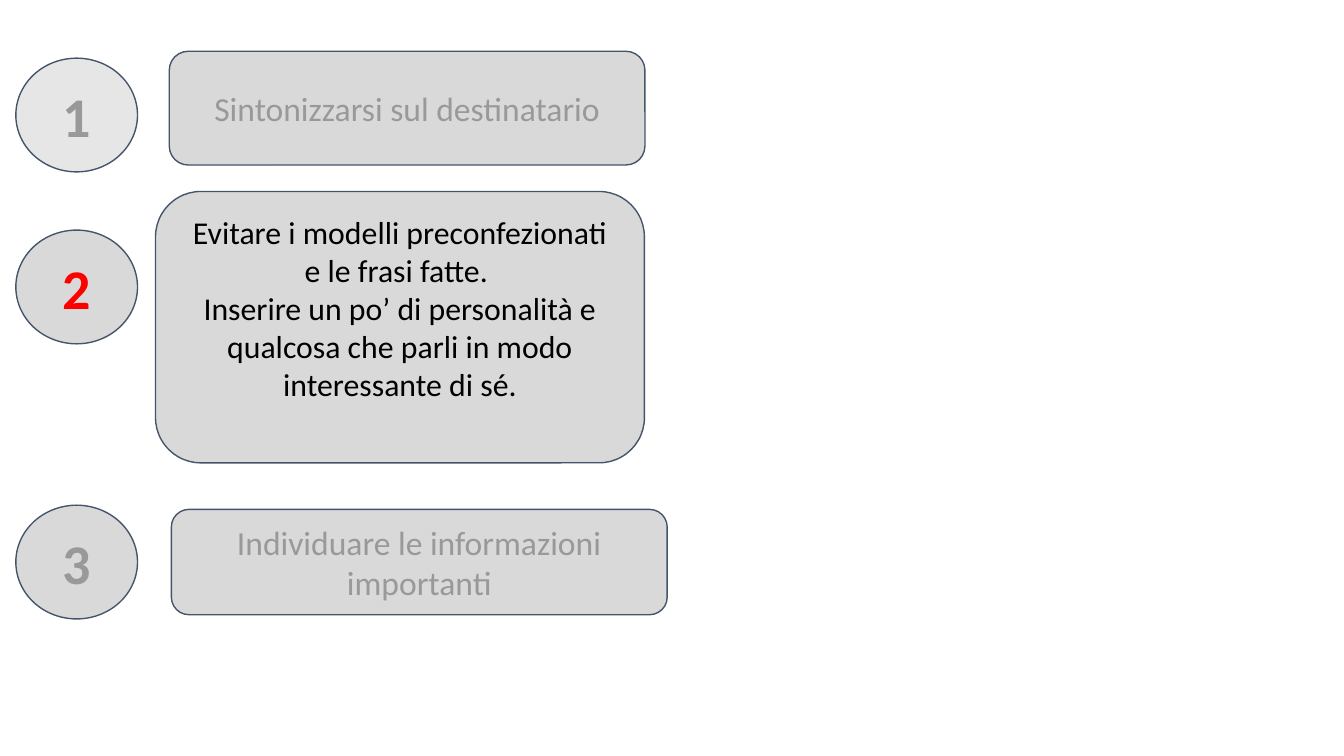
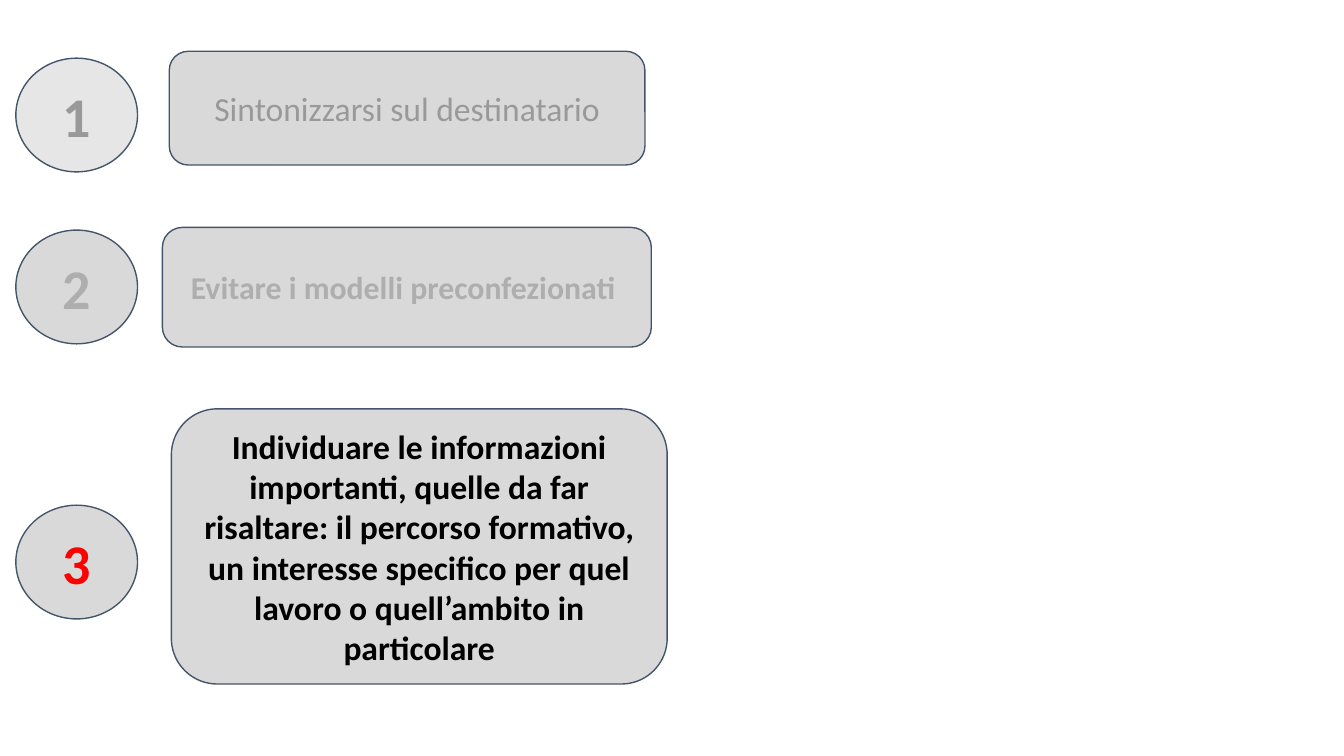
import pptx
import pptx.util
import pptx.dml.color
import pptx.enum.shapes
import pptx.enum.text

Cm = pptx.util.Cm
SHAPES = pptx.enum.shapes.MSO_SHAPE

FONT = "Calibri"
PANEL = "D9D9D9"
PALE = "E7E6E6"
OUTLINE = "44546A"
MUTED = "999999"
FAINT = "AEAEAE"
ACTIVE = "FF0000"
BLACK = "000000"
INSET = 0.25
BADGE_LEFT, BADGE_WIDTH, BADGE_HEIGHT = 0.3, 2.3, 2.15
BADGE_TOPS = {1: 1.1, 2: 4.35, 3: 9.55}


def rgb(value):
    return pptx.dml.color.RGBColor.from_string(value)


def add_panel(slide, kind, box, text, size, color, bold=False, fill=PANEL, bottom=INSET):
    shape = slide.shapes.add_shape(kind, *(Cm(length) for length in box))
    shape.shadow.inherit = False
    shape.fill.solid()
    shape.fill.fore_color.rgb = rgb(fill)
    shape.line.color.rgb = rgb(OUTLINE)
    shape.line.width = pptx.util.Pt(0.75)
    frame = shape.text_frame
    frame.word_wrap = True
    frame.vertical_anchor = pptx.enum.text.MSO_ANCHOR.MIDDLE
    frame.margin_left = frame.margin_right = frame.margin_top = Cm(INSET)
    frame.margin_bottom = Cm(bottom)
    frame.text = text
    for paragraph in frame.paragraphs:
        paragraph.alignment = pptx.enum.text.PP_ALIGN.CENTER
        for run in paragraph.runs:
            run.font.name = FONT
            run.font.size = pptx.util.Pt(size)
            run.font.bold = bold
            run.font.color.rgb = rgb(color)


def add_step(slide, number, number_color, box, text, size, color, bold=False, bottom=INSET):
    add_panel(slide, SHAPES.ROUNDED_RECTANGLE, box, text, size, color, bold, bottom=bottom)
    badge = (BADGE_LEFT, BADGE_TOPS[number], BADGE_WIDTH, BADGE_HEIGHT)
    add_panel(slide, SHAPES.OVAL, badge, str(number), 30, number_color, True,
              fill=PALE if number == 1 else PANEL)


def add_steps_slide(presentation, steps):
    slide = presentation.slides.add_slide(presentation.slide_layouts[6])
    for step in steps:
        add_step(slide, **step)


def main():
    presentation = pptx.Presentation()
    presentation.slide_width = Cm(25.4)
    presentation.slide_height = Cm(14.29)

    audience = dict(number=1, number_color=MUTED, box=(3.2, 0.97, 8.99, 2.15),
                    text="Sintonizzarsi sul destinatario", size=18, color=MUTED)
    add_steps_slide(presentation, [
        audience,
        dict(number=2, number_color=ACTIVE, box=(2.94, 3.62, 9.24, 5.13),
             text="Evitare i modelli preconfezionati e le frasi fatte. \n"
                  "Inserire un po’ di personalità e qualcosa che parli in modo "
                  "interessante di sé.",
             size=17, color=BLACK, bottom=0.97),
        dict(number=3, number_color=MUTED, box=(3.24, 9.63, 9.37, 1.99),
             text="Individuare le informazioni importanti", size=18, color=MUTED),
    ])
    add_steps_slide(presentation, [
        audience,
        dict(number=2, number_color=FAINT, box=(3.07, 4.3, 9.24, 2.26),
             text="Evitare i modelli preconfezionati ", size=17, color=FAINT, bold=True),
        dict(number=3, number_color=ACTIVE, box=(3.24, 7.73, 9.37, 5.2),
             text="Individuare le informazioni importanti, quelle da far risaltare: "
                  "il percorso formativo, un interesse specifico per quel lavoro o "
                  "quell’ambito in particolare",
             size=18, color=BLACK, bold=True),
    ])
    presentation.save("out.pptx")


if __name__ == "__main__":
    main()
